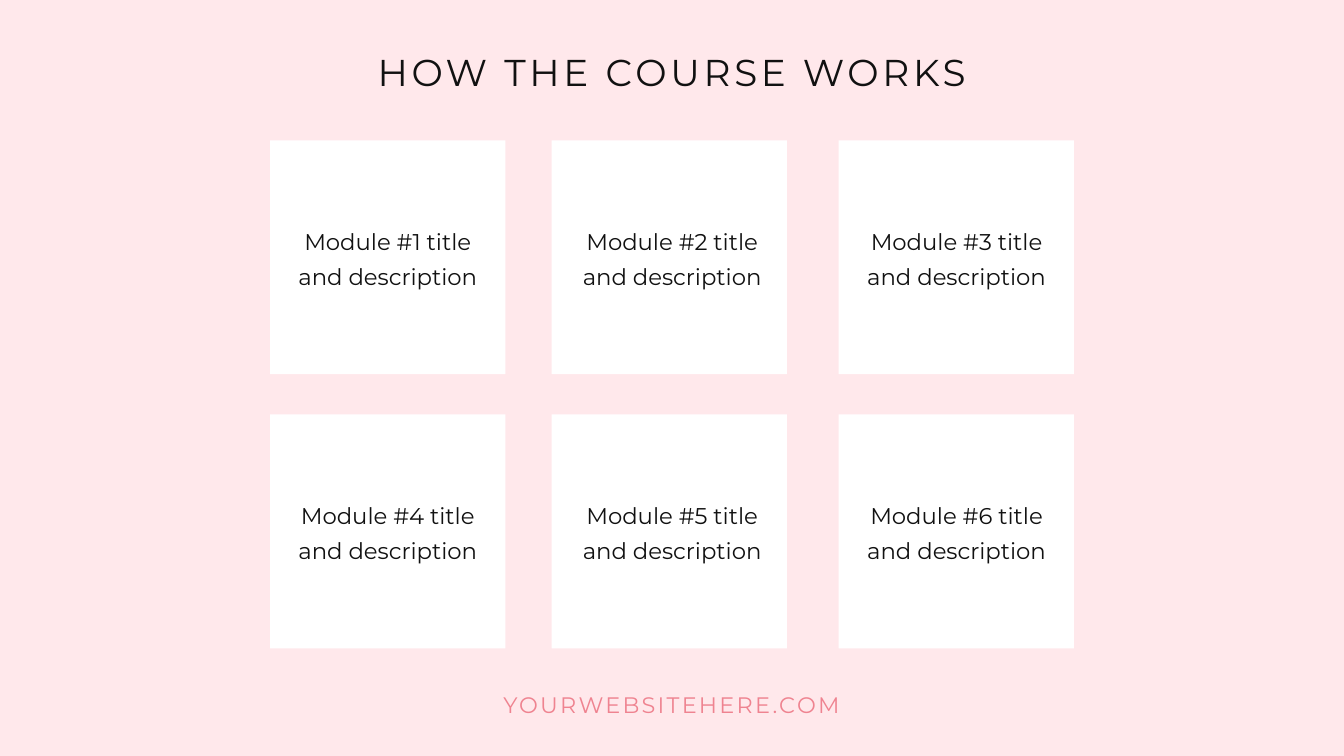
from pptx import Presentation
from pptx.dml.color import RGBColor
from pptx.enum.shapes import MSO_SHAPE
from pptx.enum.text import MSO_AUTO_SIZE, PP_ALIGN
from pptx.util import Cm, Pt

RECTANGLE = MSO_SHAPE.RECTANGLE
CENTER = PP_ALIGN.CENTER
GROW = MSO_AUTO_SIZE.SHAPE_TO_FIT_TEXT

FONT = "Montserrat"
PINK, WHITE, INK, ROSE = "FFE8EB", "FFFFFF", "111111", "EF8390"
CARD_LEFTS = (10.21, 20.85, 31.7)
CARD_W, CARD_H = 8.89, 8.84
LABEL_LEFT, LABEL_STEP = 10.97, 10.75
LABEL_W, LABEL_H = 7.37, 2.54
LABEL_DROP = 3.05
TOP, ROW_STEP = 5.31, 10.36


def rgb(value):
    """Turn a hex string into a colour."""
    return RGBColor.from_string(value)


def add_text(s, text, left, top, width, height, *, size, leading, color=INK, spacing=0):
    """Add a centred text box with a fixed line height."""
    sp = s.shapes.add_textbox(Cm(left), Cm(top), Cm(width), Cm(height))
    tf = sp.text_frame
    tf.margin_left = tf.margin_top = tf.margin_right = tf.margin_bottom = 0
    tf.word_wrap = True
    tf.auto_size = GROW
    p = tf.paragraphs[0]
    p.alignment = CENTER
    p.line_spacing = Pt(leading)
    r = p.add_run()
    r.text = text
    r.font.name = FONT
    r.font.size = Pt(size)
    r.font.color.rgb = rgb(color)
    if spacing:
        r.font._element.set("spc", str(round(spacing * 100)))


def add_card(s, left, top):
    """Add a plain white card."""
    sp = s.shapes.add_shape(RECTANGLE, Cm(left), Cm(top), Cm(CARD_W), Cm(CARD_H))
    sp.shadow.inherit = False
    sp.fill.solid()
    sp.fill.fore_color.rgb = rgb(WHITE)
    sp.line.fill.background()


def add_module(s, index):
    """Add one module card and its label at its place in the grid."""
    row, col = divmod(index, len(CARD_LEFTS))
    top = TOP + row * ROW_STEP
    add_card(s, CARD_LEFTS[col], top)
    add_text(s, f"Module #{index + 1} title and description",
             LABEL_LEFT + col * LABEL_STEP, top + LABEL_DROP, LABEL_W, LABEL_H,
             size=24.4, leading=36.7)


def main():
    """Build the course overview slide."""
    prs = Presentation()
    prs.slide_width, prs.slide_height = Cm(50.8), Cm(28.58)
    s = prs.slides.add_slide(prs.slide_layouts[6])
    s.background.fill.solid()
    s.background.fill.fore_color.rgb = rgb(PINK)
    add_text(s, "HOW THE COURSE WORKS", 12.47, 2.16, 25.86, 1.47,
             size=40, leading=39.2, spacing=4)
    for index in range(6):
        add_module(s, index)
    add_text(s, "YOURWEBSITEHERE.COM", 16.33, 26.31, 18.11, 0.89,
             size=24, leading=24, color=ROSE, spacing=2.4)
    prs.save("out.pptx")


if __name__ == "__main__":
    main()
